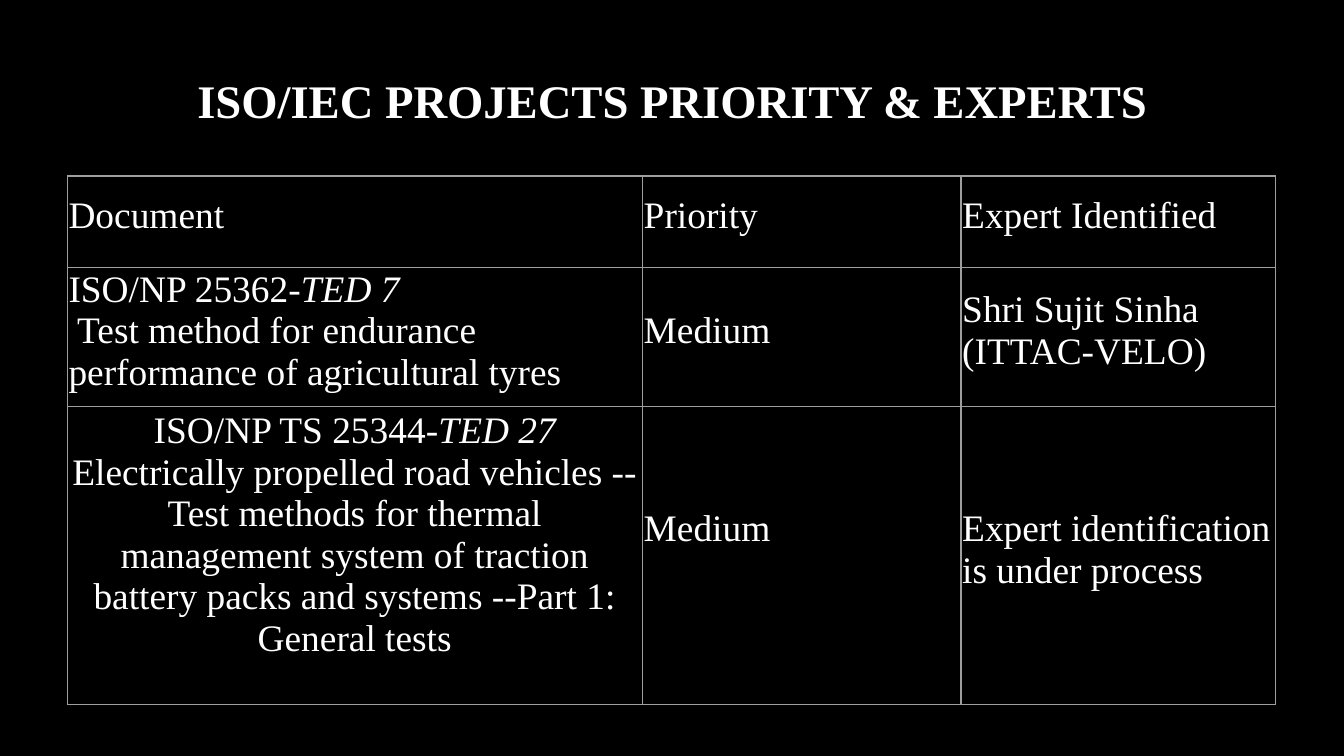
import pptx
import pptx.util
import pptx.dml.color
import pptx.enum.text
import pptx.oxml
import pptx.oxml.ns

Inches = pptx.util.Inches
Pt = pptx.util.Pt
BLACK = pptx.dml.color.RGBColor(0x00, 0x00, 0x00)
WHITE = pptx.dml.color.RGBColor(0xFF, 0xFF, 0xFF)
GREY = pptx.dml.color.RGBColor(0x9E, 0x9E, 0x9E)
FONT = "Times New Roman"
MIDDLE = pptx.enum.text.MSO_ANCHOR.MIDDLE
CENTER = pptx.enum.text.PP_ALIGN.CENTER
LEFT = pptx.enum.text.PP_ALIGN.LEFT

COLUMN_WIDTHS = [4.28, 2.37, 2.34]
ROW_HEIGHTS = [0.68, 1.03, 2.22]
LINE_HEIGHT = 0.31
ROWS = [
    [[["Document"]], [["Priority"]], [["Expert Identified"]]],
    [
        [["ISO/NP 25362-", "TED 7"],
         [" Test method for endurance performance of agricultural tyres"]],
        [["Medium"]],
        [["Shri Sujit Sinha (ITTAC-VELO)"]],
    ],
    [
        [["ISO/NP TS 25344-", "TED 27"],
         ["Electrically propelled road vehicles --Test methods for thermal management "
          "system of traction battery packs and systems --Part 1: General tests"]],
        [["Medium"]],
        [["Expert identification is under process"]],
    ],
]


def style_run(run, size, bold=False, italic=False):
    run.font.name = FONT
    run.font.size = Pt(size)
    run.font.bold = bold
    run.font.italic = italic
    run.font.color.rgb = WHITE


def add_borders(cell):
    properties = cell._tc.get_or_add_tcPr()
    for index, side in enumerate(["lnL", "lnR", "lnT", "lnB"]):
        border = pptx.oxml.parse_xml(
            f'<a:{side} {pptx.oxml.ns.nsdecls("a")} w="{Pt(0.75)}">'
            f'<a:solidFill><a:srgbClr val="{GREY}"/></a:solidFill></a:{side}>')
        properties.insert(index, border)


presentation = pptx.Presentation()
presentation.slide_width = Inches(10)
presentation.slide_height = Inches(10 * 9 / 16)
slide = presentation.slides.add_slide(presentation.slide_layouts[5])
slide.background.fill.solid()
slide.background.fill.fore_color.rgb = BLACK

title = slide.shapes.title
title.left, title.top = Inches(0.34), Inches(0.43)
title.width, title.height = Inches(9.32), Inches(0.63)
title.text_frame.text = "ISO/IEC PROJECTS PRIORITY & EXPERTS"
title.text_frame.vertical_anchor = MIDDLE
title.text_frame.paragraphs[0].alignment = CENTER
style_run(title.text_frame.paragraphs[0].runs[0], 25, bold=True)

table = slide.shapes.add_table(
    len(ROW_HEIGHTS), len(COLUMN_WIDTHS), Inches(0.5), Inches(1.31),
    Inches(sum(COLUMN_WIDTHS)), Inches(sum(ROW_HEIGHTS))).table
table.first_row = False
table.horz_banding = False
for column, width in zip(table.columns, COLUMN_WIDTHS):
    column.width = Inches(width)
for row, height in zip(table.rows, ROW_HEIGHTS):
    row.height = Inches(height)

for row_index, row in enumerate(ROWS):
    for column_index, paragraphs in enumerate(row):
        cell = table.cell(row_index, column_index)
        last_row = row_index == len(ROWS) - 1
        centered = last_row and column_index == 0
        margin = 0.03 if centered else 0.01
        bottom = 0.03 if centered else 0.1
        if last_row and column_index < 2:
            bottom += LINE_HEIGHT
        cell.margin_left = cell.margin_top = Inches(margin)
        cell.margin_right = Inches(margin)
        cell.margin_bottom = Inches(bottom)
        cell.vertical_anchor = MIDDLE
        cell.fill.solid()
        cell.fill.fore_color.rgb = BLACK
        add_borders(cell)
        for index, texts in enumerate(paragraphs):
            frame = cell.text_frame
            paragraph = frame.add_paragraph() if index else frame.paragraphs[0]
            paragraph.alignment = CENTER if centered else LEFT
            for run_index, text in enumerate(texts):
                run = paragraph.add_run()
                run.text = text
                style_run(run, 20, italic=run_index == 1)

presentation.save("out.pptx")
